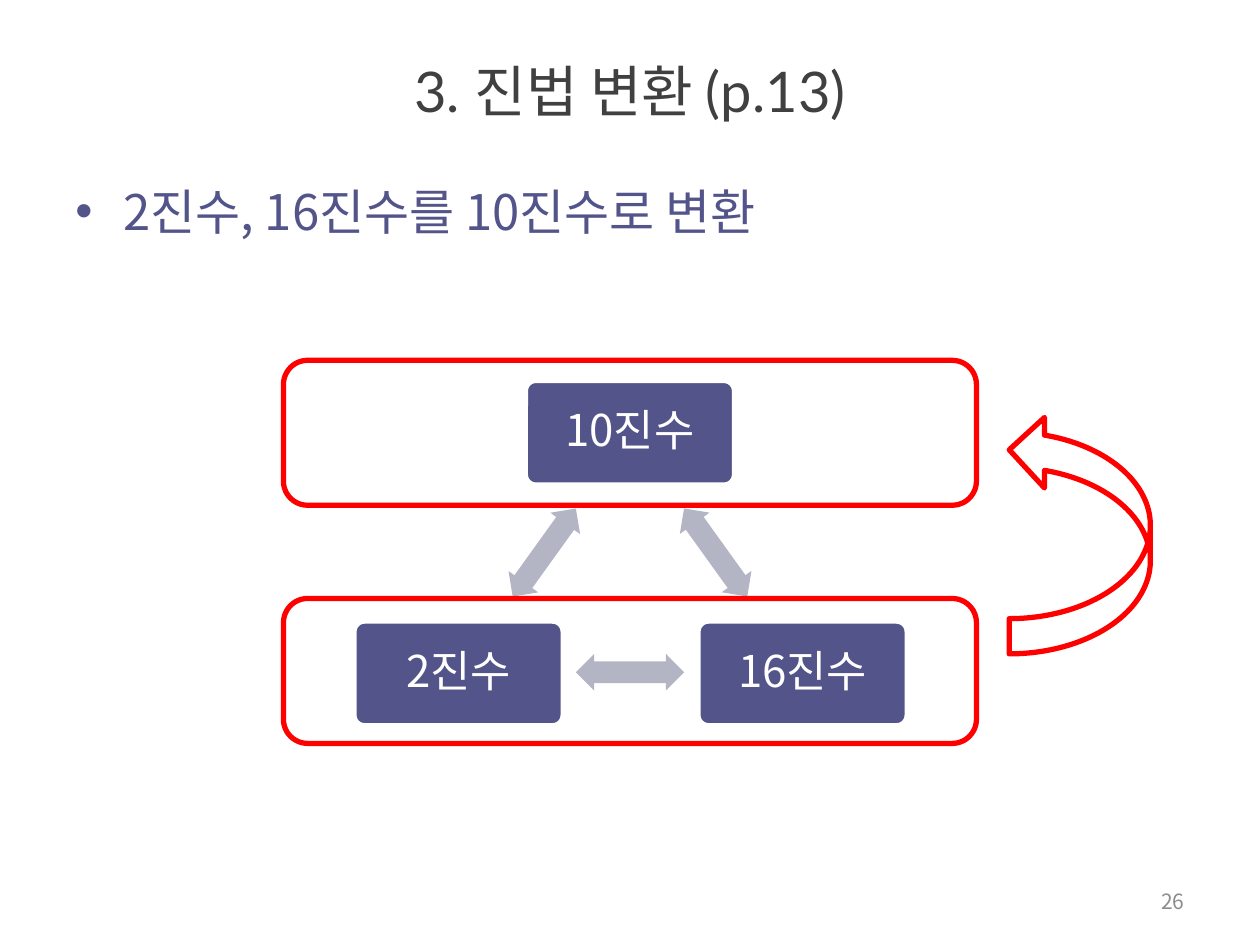
"""Build the slide on converting binary and hexadecimal numbers to decimal."""
from lxml import etree
from pptx import Presentation
from pptx.dml.color import RGBColor
from pptx.enum.shapes import MSO_SHAPE as Shape
from pptx.enum.text import MSO_ANCHOR as Anchor, PP_ALIGN as Align
from pptx.oxml.ns import qn
from pptx.util import Inches, Pt

INDIGO = RGBColor(0x53, 0x54, 0x8A)
LAVENDER = RGBColor(0xB3, 0xB4, 0xC4)
CHARCOAL = RGBColor(0x40, 0x40, 0x40)
GRAY = RGBColor(0x8C, 0x8C, 0x8C)
RED = RGBColor(0xFF, 0x00, 0x00)
WHITE = RGBColor(0xFF, 0xFF, 0xFF)
KOREAN = "Noto Sans CJK KR"


def write(box, text, size, color, align, anchor=Anchor.MIDDLE, font=KOREAN):
    frame = box.text_frame
    frame.word_wrap = True
    frame.vertical_anchor = anchor
    para = frame.paragraphs[0]
    para.alignment = align
    span = para.add_run()
    span.text = text
    span.font.size = Pt(size)
    span.font.name = font
    span.font.color.rgb = color
    east_asian = etree.SubElement(span.font._element, qn("a:ea"))
    east_asian.set("typeface", KOREAN)
    return para


def draw(kind, left, top, width, height, fill=None, line=None):
    shape = page.shapes.add_shape(kind, Inches(left), Inches(top), Inches(width), Inches(height))
    shape.shadow.inherit = False
    if fill is None:
        shape.fill.background()
    else:
        shape.fill.solid()
        shape.fill.fore_color.rgb = fill
    if line is None:
        shape.line.fill.background()
    else:
        shape.line.color.rgb = line
        shape.line.width = Pt(3)
    return shape


deck = Presentation()
deck.slide_width, deck.slide_height = Inches(10), Inches(7.5)
page = deck.slides.add_slide(deck.slide_layouts[6])

title = page.shapes.add_textbox(Inches(0.5), Inches(0.36), Inches(9), Inches(0.71))
write(title, "3. 진법 변환 (p.13)", 32, CHARCOAL, Align.CENTER, font="Lato")

body = page.shapes.add_textbox(Inches(0.5), Inches(1.39), Inches(9), Inches(5.43))
topic = write(body, "2진수, 16진수를 10진수로 변환", 28, INDIGO, Align.LEFT, Anchor.TOP)
topic.space_before = Pt(5.6)
settings = topic._p.get_or_add_pPr()
settings.set("marL", str(Inches(0.38)))
settings.set("indent", str(Inches(-0.38)))
etree.SubElement(settings, qn("a:buFont")).set("typeface", "Arial")
etree.SubElement(settings, qn("a:buChar")).set("char", "•")

number = page.shapes.add_textbox(Inches(7.17), Inches(6.95), Inches(2.33), Inches(0.4))
write(number, "26", 12, GRAY, Align.RIGHT)

for label, left, top in [("10진수", 4.17, 3.02), ("16진수", 5.54, 4.93), ("2진수", 2.81, 4.93)]:
    node = draw(Shape.ROUNDED_RECTANGLE, left, top, 1.66, 0.83, INDIGO, WHITE)
    node.adjustments[0] = 0.1
    write(node, label, 25, WHITE, Align.CENTER).line_spacing = 0.9

for left, top, angle in [(5.25, 4.24, 54.3), (4.57, 5.19, 180), (3.89, 4.24, 305.7)]:
    link = draw(Shape.LEFT_RIGHT_ARROW, left, top, 0.86, 0.29, LAVENDER)
    link.adjustments[0] = 0.6
    link.adjustments[1] = 0.5
    link.rotation = angle

for top in (2.86, 4.75):
    draw(Shape.ROUNDED_RECTANGLE, 2.25, top, 5.5, 1.15, line=RED)

conversion = draw(Shape.CURVED_LEFT_ARROW, 8.01, 3.29, 1.12, 1.9, line=RED)
conversion._element.spPr.find(qn("a:xfrm")).set("flipV", "1")

deck.save("out.pptx")
